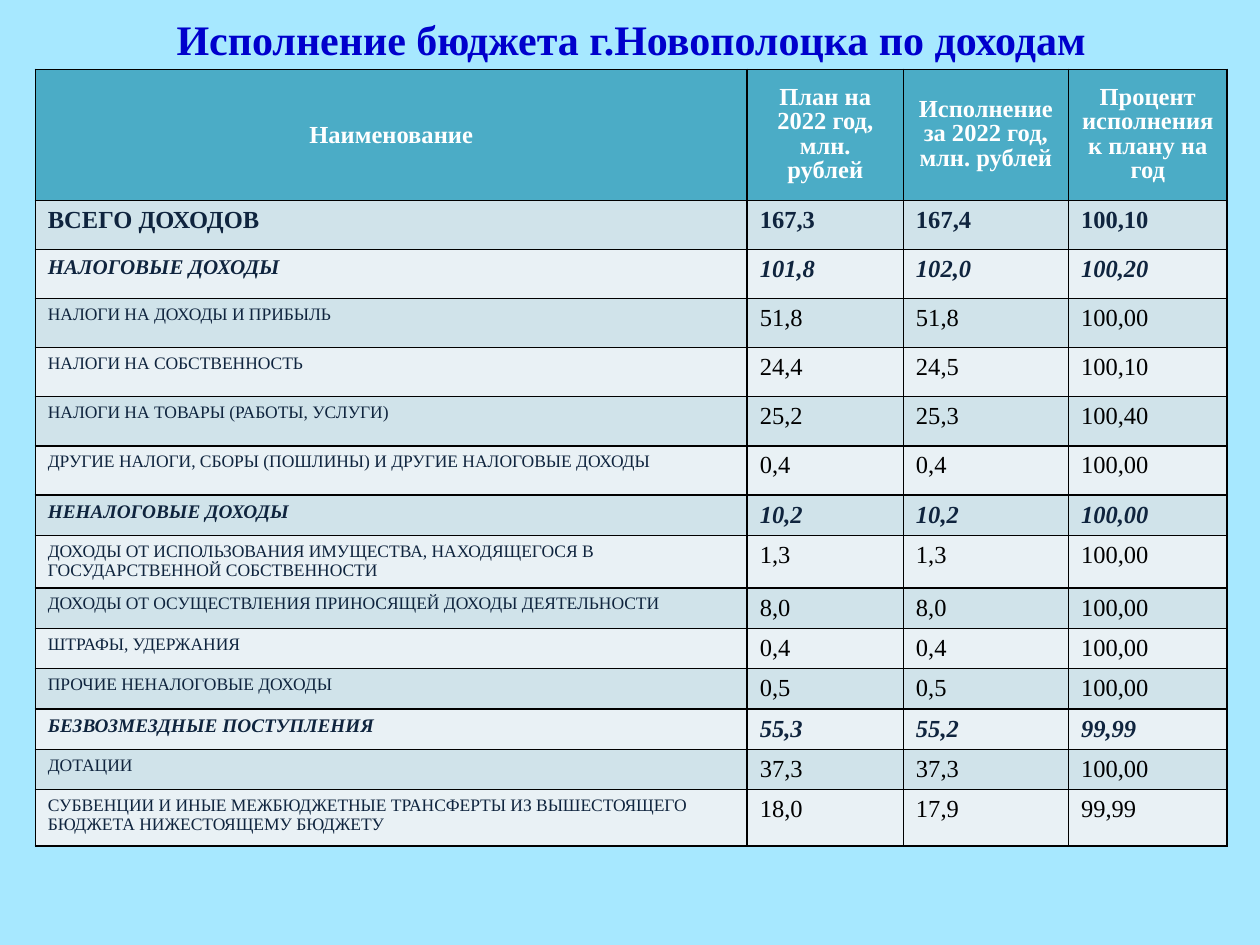
from dataclasses import dataclass

from lxml import etree
from pptx import Presentation
from pptx import util as u
from pptx.dml.color import RGBColor
from pptx.enum import text as t
from pptx.oxml import ns

SLIDE_WIDTH, SLIDE_HEIGHT = u.Inches(10), u.Inches(7.5)
GRID_COLUMNS, GRID_ROWS = 1000, 750

FONT = "Times New Roman"
SKY = RGBColor(0xA7, 0xE8, 0xFF)
TITLE_BLUE = RGBColor(0x00, 0x00, 0xCC)
HEADER_TEAL = RGBColor(0x4B, 0xAC, 0xC6)
BANDS = RGBColor(0xE9, 0xF1, 0xF5), RGBColor(0xD0, 0xE3, 0xEA)
NAVY = RGBColor(0x0F, 0x24, 0x3E)
BLACK = RGBColor(0x00, 0x00, 0x00)
WHITE = RGBColor(0xFF, 0xFF, 0xFF)


@dataclass(frozen=True)
class Style:
    size: float
    color: RGBColor
    bold: bool = False
    italic: bool = False


@dataclass(frozen=True)
class BudgetRow:
    name: str
    plan: str
    actual: str
    percent: str
    height: int
    name_style: Style
    value_style: Style


TITLE = Style(24, TITLE_BLUE, bold=True)
HEADER = Style(14, WHITE, bold=True)
TOTAL = Style(14, NAVY, bold=True)
TAX_GROUP = Style(12, NAVY, bold=True, italic=True)
GROUP = Style(11, NAVY, bold=True, italic=True)
GROUP_VALUE = Style(14, NAVY, bold=True, italic=True)
ITEM = Style(10, NAVY)
ITEM_VALUE = Style(14, BLACK)

HEADER_HEIGHT, TALL, SHORT = 104, 39, 32
COLUMN_WIDTHS = 565, 124, 131, 126
HEADERS = (
    "Наименование",
    "План на 2022 год, млн. рублей",
    "Исполнение за 2022 год, млн. рублей",
    "Процент исполнения к плану на год",
)


def group(name: str, plan: str, actual: str, percent: str,
          height: int = SHORT, name_style: Style = GROUP) -> BudgetRow:
    return BudgetRow(name, plan, actual, percent, height, name_style, GROUP_VALUE)


def item(name: str, plan: str, actual: str, percent: str, height: int = SHORT) -> BudgetRow:
    return BudgetRow(name, plan, actual, percent, height, ITEM, ITEM_VALUE)


BUDGET = (
    BudgetRow("ВСЕГО ДОХОДОВ", "167,3", "167,4", "100,10", TALL, TOTAL, TOTAL),
    group("НАЛОГОВЫЕ ДОХОДЫ", "101,8", "102,0", "100,20", TALL, TAX_GROUP),
    item("НАЛОГИ НА ДОХОДЫ И ПРИБЫЛЬ", "51,8", "51,8", "100,00", TALL),
    item("НАЛОГИ НА СОБСТВЕННОСТЬ", "24,4", "24,5", "100,10", TALL),
    item("НАЛОГИ НА ТОВАРЫ (РАБОТЫ, УСЛУГИ)", "25,2", "25,3", "100,40", TALL),
    item("ДРУГИЕ НАЛОГИ, СБОРЫ (ПОШЛИНЫ) И ДРУГИЕ НАЛОГОВЫЕ ДОХОДЫ",
         "0,4", "0,4", "100,00", TALL),
    group("НЕНАЛОГОВЫЕ ДОХОДЫ", "10,2", "10,2", "100,00"),
    item("ДОХОДЫ ОТ ИСПОЛЬЗОВАНИЯ ИМУЩЕСТВА, НАХОДЯЩЕГОСЯ В ГОСУДАРСТВЕННОЙ СОБСТВЕННОСТИ",
         "1,3", "1,3", "100,00", 42),
    item("ДОХОДЫ ОТ ОСУЩЕСТВЛЕНИЯ ПРИНОСЯЩЕЙ ДОХОДЫ ДЕЯТЕЛЬНОСТИ", "8,0", "8,0", "100,00"),
    item("ШТРАФЫ, УДЕРЖАНИЯ", "0,4", "0,4", "100,00"),
    item("ПРОЧИЕ НЕНАЛОГОВЫЕ ДОХОДЫ", "0,5", "0,5", "100,00"),
    group("БЕЗВОЗМЕЗДНЫЕ ПОСТУПЛЕНИЯ", "55,3", "55,2", "99,99"),
    item("ДОТАЦИИ", "37,3", "37,3", "100,00"),
    item("СУБВЕНЦИИ И ИНЫЕ МЕЖБЮДЖЕТНЫЕ ТРАНСФЕРТЫ ИЗ ВЫШЕСТОЯЩЕГО "
         "БЮДЖЕТА НИЖЕСТОЯЩЕМУ БЮДЖЕТУ", "18,0", "17,9", "99,99", 45),
)


def across(columns: int) -> int:
    return SLIDE_WIDTH * columns // GRID_COLUMNS


def down(rows: int) -> int:
    return SLIDE_HEIGHT * rows // GRID_ROWS


def write(frame, content: str, style: Style, centred: bool = False,
          line_points: float | None = None) -> None:
    paragraph = frame.paragraphs[0]
    paragraph.alignment = t.PP_ALIGN.CENTER if centred else t.PP_ALIGN.LEFT
    if line_points:
        paragraph.line_spacing = u.Pt(line_points)
    run = paragraph.add_run()
    run.text = content
    font = run.font
    font.name, font.size = FONT, u.Pt(style.size)
    font.bold, font.italic = style.bold, style.italic
    font.color.rgb = style.color


def paint_cell(cell, color: RGBColor) -> None:
    """Fill a cell and outline its four sides in black."""
    cell.fill.solid()
    cell.fill.fore_color.rgb = color
    properties = cell._tc.get_or_add_tcPr()
    for position, side in enumerate(("lnL", "lnR", "lnT", "lnB")):
        line = etree.Element(ns.qn(f"a:{side}"), w=str(u.Pt(1)))
        solid = etree.SubElement(line, ns.qn("a:solidFill"))
        etree.SubElement(solid, ns.qn("a:srgbClr"), val=str(BLACK))
        properties.insert(position, line)


def add_title(slide) -> None:
    box = slide.shapes.add_textbox(across(51), down(4), across(900), down(32))
    frame = box.text_frame
    frame.word_wrap = True
    frame.auto_size = t.MSO_AUTO_SIZE.NONE
    frame.vertical_anchor = t.MSO_ANCHOR.MIDDLE
    write(frame, "Исполнение бюджета г.Новополоцка по доходам", TITLE, True, 44)


def add_budget_table(slide) -> None:
    heights = [HEADER_HEIGHT] + [row.height for row in BUDGET]
    table = slide.shapes.add_table(
        len(heights), len(COLUMN_WIDTHS), across(28), down(55),
        across(sum(COLUMN_WIDTHS)), down(sum(heights))).table
    for column, width in zip(table.columns, COLUMN_WIDTHS):
        column.width = across(width)
    for row, height in zip(table.rows, heights):
        row.height = down(height)

    for column, label in enumerate(HEADERS):
        cell = table.cell(0, column)
        paint_cell(cell, HEADER_TEAL)
        cell.vertical_anchor = t.MSO_ANCHOR.MIDDLE
        write(cell.text_frame, label, HEADER, True, 14 if column else None)

    for index, row in enumerate(BUDGET, start=1):
        for column, content in enumerate((row.name, row.plan, row.actual, row.percent)):
            cell = table.cell(index, column)
            paint_cell(cell, BANDS[index % 2])
            write(cell.text_frame, content, row.value_style if column else row.name_style)


def main() -> None:
    presentation = Presentation()
    presentation.slide_width, presentation.slide_height = SLIDE_WIDTH, SLIDE_HEIGHT
    slide = presentation.slides.add_slide(presentation.slide_layouts[6])
    slide.background.fill.solid()
    slide.background.fill.fore_color.rgb = SKY
    add_title(slide)
    add_budget_table(slide)
    presentation.save("out.pptx")


if __name__ == "__main__":
    main()
